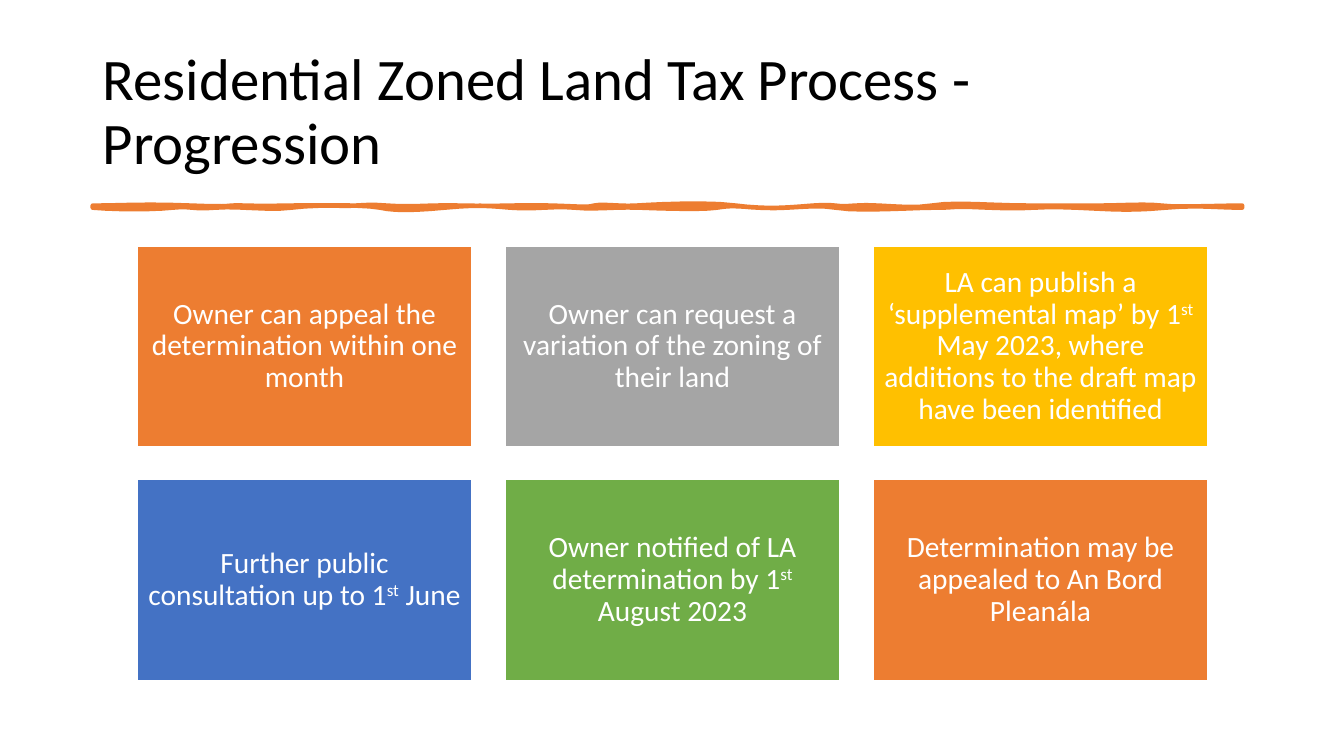
import pptx
import pptx.dml.color
import pptx.enum.text
import pptx.enum.shapes
import pptx.oxml.ns
import pptx.util
from lxml import etree

Inches = pptx.util.Inches
RGBColor = pptx.dml.color.RGBColor
BLACK = RGBColor(0x00, 0x00, 0x00)
WHITE = RGBColor(0xFF, 0xFF, 0xFF)
ORANGE = RGBColor(0xED, 0x7D, 0x31)
GREY = RGBColor(0xA5, 0xA5, 0xA5)
GOLD = RGBColor(0xFF, 0xC0, 0x00)
BLUE = RGBColor(0x44, 0x72, 0xC4)
GREEN = RGBColor(0x70, 0xAD, 0x47)

STEPS = [
    ("Owner can appeal the determination within one month", ORANGE),
    ("Owner can request a variation of the zoning of their land", GREY),
    ("LA can publish a ‘supplemental map’ by 1^st^ May 2023, "
     "where additions to the draft map have been identified", GOLD),
    ("Further public consultation up to 1^st^ June", BLUE),
    ("Owner notified of LA determination by 1^st^ August 2023", GREEN),
    ("Determination may be appealed to An Bord Pleanála", ORANGE),
]
COLUMNS = 3

BRUSH_START = (0.92, 2.04)
BRUSH_CURVES = [
    (1.19, 2.04, 1.44, 2.02, 1.9, 2.04), (2.37, 2.06, 2.2, 2.03, 2.44, 2.04),
    (2.67, 2.05, 3.03, 2.03, 3.31, 2.04), (3.6, 2.05, 3.59, 2.02, 3.84, 2.04),
    (4.1, 2.06, 4.23, 2.03, 4.6, 2.04), (4.98, 2.05, 5.14, 2.03, 5.48, 2.04),
    (5.81, 2.05, 5.81, 2.06, 5.89, 2.04), (5.98, 2.02, 6.15, 2.05, 6.31, 2.04),
    (6.47, 2.03, 7.01, 2, 7.3, 2.04), (7.59, 2.08, 7.81, 2.06, 8.06, 2.04),
    (8.31, 2.02, 8.27, 2.06, 8.48, 2.04), (8.68, 2.02, 9.01, 2.08, 9.24, 2.04),
    (9.47, 2, 9.82, 2.04, 10.23, 2.04), (10.63, 2.04, 10.63, 2.04, 10.87, 2.04),
    (11.12, 2.04, 11.36, 2.02, 11.52, 2.04), (11.68, 2.06, 12.03, 2.04, 12.32, 2.04),
    (12.32, 2.05, 12.32, 2.05, 12.32, 2.06), (12.05, 2.06, 11.89, 2.03, 11.56, 2.06),
    (11.22, 2.09, 11.1, 2.08, 10.68, 2.06), (10.27, 2.04, 10.23, 2.08, 9.81, 2.06),
    (9.39, 2.04, 9.52, 2.06, 9.28, 2.06), (9.04, 2.06, 8.51, 2.1, 8.29, 2.06),
    (8.06, 2.02, 7.82, 2.08, 7.53, 2.06), (7.24, 2.04, 7.25, 2.04, 7.11, 2.06),
    (6.98, 2.08, 6.61, 2.07, 6.35, 2.06), (6.09, 2.05, 5.9, 2.08, 5.7, 2.06),
    (5.51, 2.04, 5.28, 2.08, 5.06, 2.06), (4.83, 2.04, 4.73, 2.03, 4.41, 2.06),
    (4.09, 2.09, 3.9, 2.09, 3.77, 2.06), (3.63, 2.03, 3.1, 2.03, 2.89, 2.06),
    (2.68, 2.09, 2.35, 2.04, 2.13, 2.06), (1.92, 2.08, 1.89, 2.04, 1.71, 2.06),
    (1.54, 2.08, 1.14, 2.08, 0.92, 2.06),
]


def curve_points(start, curves, pieces=6):
    """Return points along a chain of cubic curves."""
    points = []
    for x1, y1, x2, y2, x3, y3 in curves:
        for piece in range(1, pieces + 1):
            t = piece / pieces
            u = 1 - t
            weights = (u ** 3, 3 * u * u * t, 3 * u * t * t, t ** 3)
            points.append(tuple(
                Inches(sum(w * v for w, v in zip(weights, values)))
                for values in ((start[0], x1, x2, x3), (start[1], y1, y2, y3))))
        start = (x3, y3)
    return points


class ProcessSlide:
    """Draws the elements of one slide in a shared style."""

    font_name = "Calibri"
    line_spacing = 0.9

    def __init__(self, slide):
        """Keep the slide to draw on."""
        self.slide = slide

    def apply(self, target, formats):
        """Set each format value on the target."""
        for attribute, value in formats.items():
            setattr(target, attribute, value)

    def add_text(self, frame, text, size, color, align, inset_x, inset_y):
        """Fill a frame with text whose superscripts stand between carets."""
        self.apply(frame, {
            "word_wrap": True,
            "vertical_anchor": pptx.enum.text.MSO_ANCHOR.MIDDLE,
            "margin_left": Inches(inset_x), "margin_right": Inches(inset_x),
            "margin_top": Inches(inset_y), "margin_bottom": Inches(inset_y)})
        paragraph = frame.paragraphs[0]
        self.apply(paragraph, {"alignment": align, "line_spacing": self.line_spacing})
        for index, part in enumerate(text.split("^")):
            run = paragraph.add_run()
            run.text = part
            self.apply(run.font, {"name": self.font_name, "size": pptx.util.Pt(size)})
            run.font.color.rgb = color
            if index % 2:
                run._r.get_or_add_rPr().set("baseline", "30000")

    def paint(self, shape, fill, line, width):
        """Give a shape its fill and outline without a shadow."""
        shape.shadow.inherit = False
        shape.fill.solid()
        shape.fill.fore_color.rgb = fill
        shape.line.color.rgb = line
        shape.line.width = pptx.util.Pt(width)

    def title(self, text, left, top, width, height):
        """Add the slide title."""
        heading = self.slide.shapes.add_textbox(*map(Inches, (left, top, width, height)))
        self.add_text(heading.text_frame, text, 42, BLACK,
                      pptx.enum.text.PP_ALIGN.LEFT, 0.1, 0.05)

    def brush_rule(self, start, curves):
        """Add the hand-drawn rule below the title."""
        builder = self.slide.shapes.build_freeform(*map(Inches, start))
        builder.add_line_segments(curve_points(start, curves), close=True)
        rule = builder.convert_to_shape()
        self.paint(rule, ORANGE, ORANGE, 3.25)
        outline = rule._element.spPr.find(pptx.oxml.ns.qn("a:ln"))
        etree.SubElement(outline, pptx.oxml.ns.qn("a:round"))

    def step(self, text, fill, left, top, width, height):
        """Add one coloured process step."""
        tile = self.slide.shapes.add_shape(
            pptx.enum.shapes.MSO_SHAPE.RECTANGLE,
            *map(Inches, (left, top, width, height)))
        self.paint(tile, fill, WHITE, 1)
        self.add_text(tile.text_frame, text, 21, WHITE,
                      pptx.enum.text.PP_ALIGN.CENTER, 0.09, 0.09)


def main():
    """Build and save the presentation."""
    deck = pptx.Presentation()
    deck.slide_width, deck.slide_height = Inches(13.33), Inches(7.5)
    process = ProcessSlide(deck.slides.add_slide(deck.slide_layouts[6]))
    process.title("Residential Zoned Land Tax Process - Progression",
                  0.92, 0.4, 11.5, 1.45)
    process.brush_rule(BRUSH_START, BRUSH_CURVES)
    for index, (text, fill) in enumerate(STEPS):
        row, column = divmod(index, COLUMNS)
        process.step(text, fill, 1.36 + 3.65 * column, 2.44 + 2.32 * row, 3.32, 1.99)
    deck.save("out.pptx")


if __name__ == "__main__":
    main()
